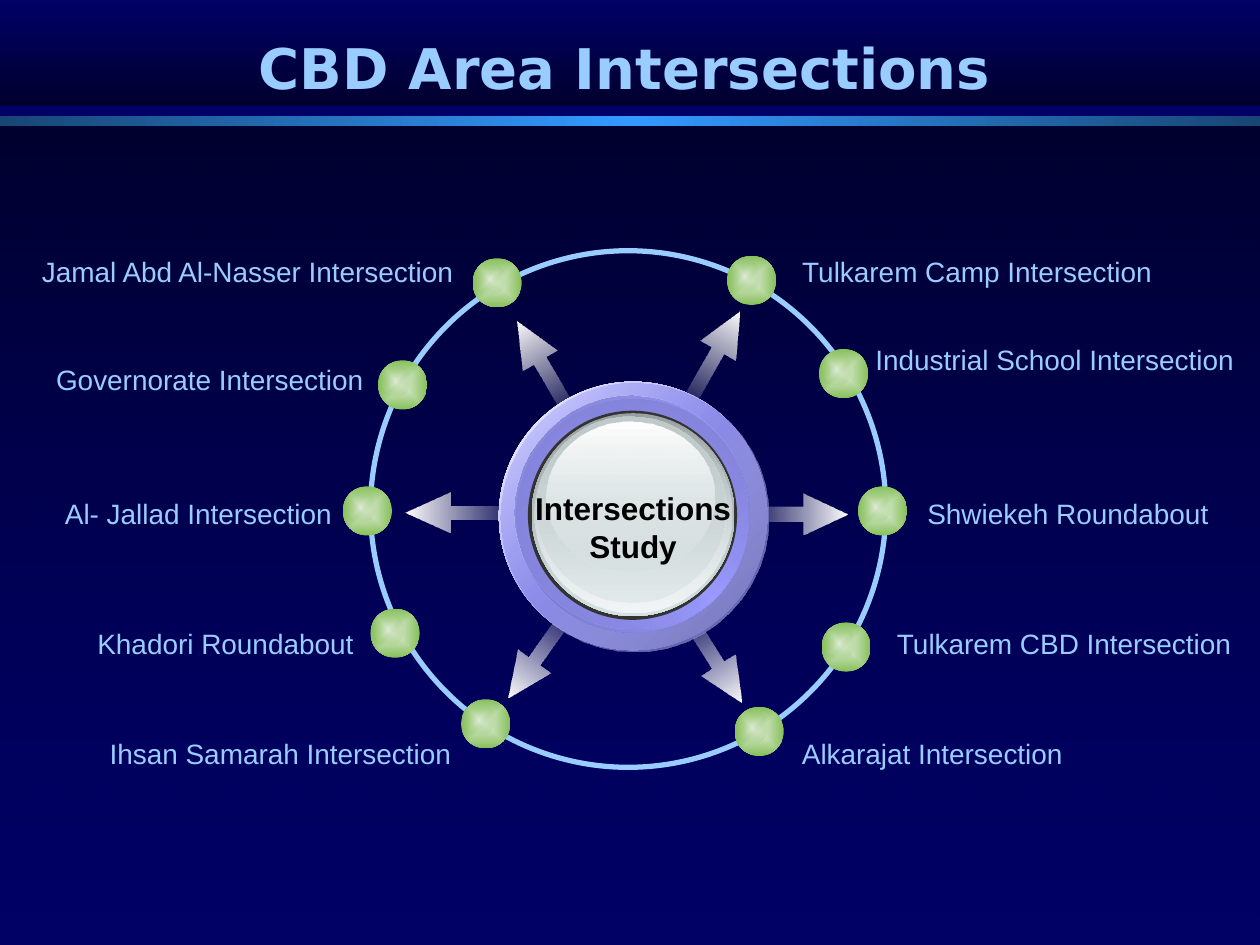
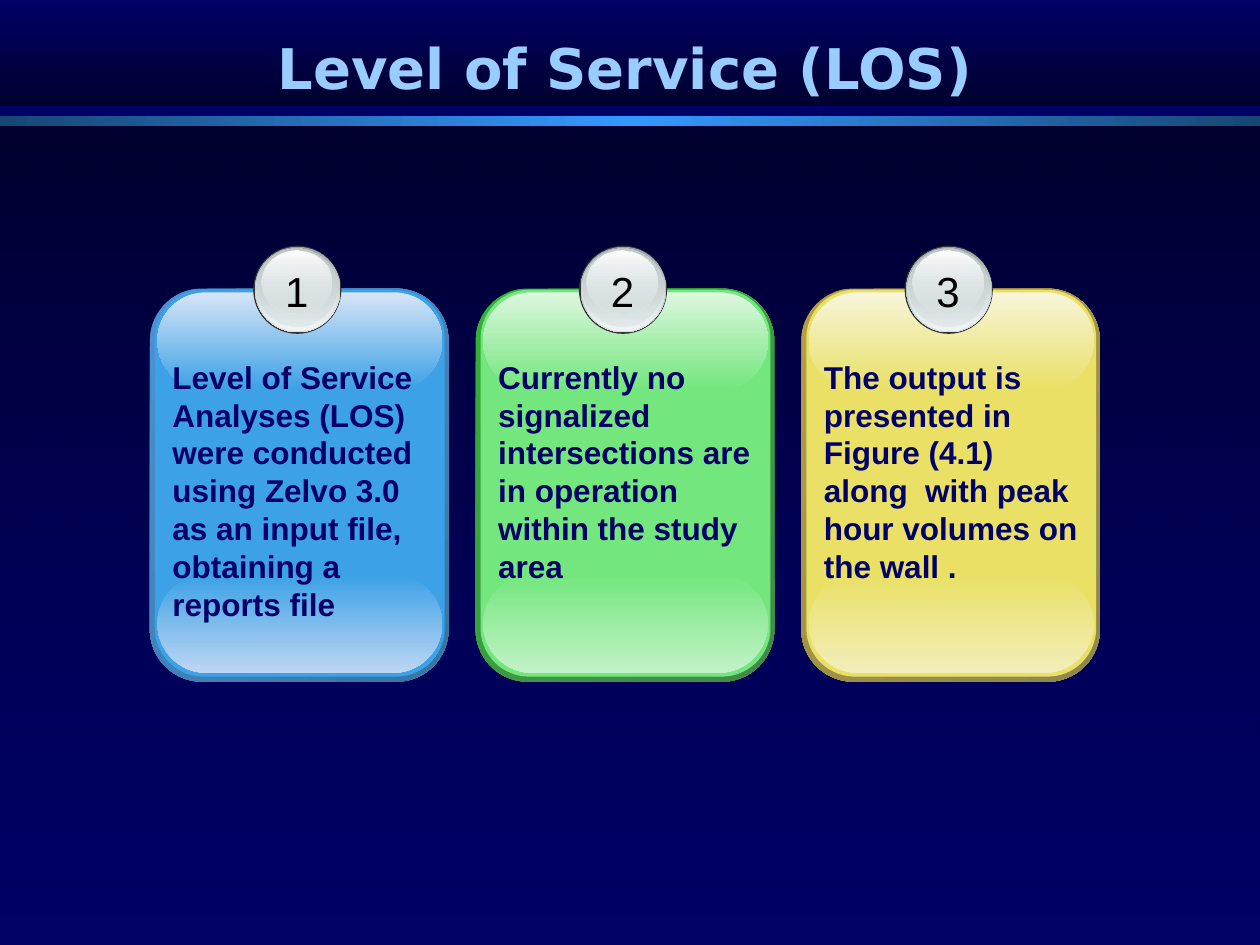
from lxml import etree
from pptx import Presentation
from pptx.dml.color import RGBColor
from pptx.enum.shapes import MSO_SHAPE
from pptx.enum.text import MSO_ANCHOR, PP_ALIGN
from pptx.oxml.ns import qn
from pptx.util import Inches, Pt

RECT, ROUND = MSO_SHAPE.RECTANGLE, MSO_SHAPE.ROUNDED_RECTANGLE
OVAL, ARROW = MSO_SHAPE.OVAL, MSO_SHAPE.RIGHT_ARROW
LEFT, CENTER = PP_ALIGN.LEFT, PP_ALIGN.CENTER
TOP, MIDDLE = MSO_ANCHOR.TOP, MSO_ANCHOR.MIDDLE

NAVY, MIDNIGHT = "000066", "00002F"
SKY, AZURE, DEEP_AZURE = "99CCFF", "3399FF", "174675"
LILAC, CHARCOAL, BLACK, WHITE = "9999FF", "333333", "000000", "FFFFFF"
LEAF, PALE_LEAF = "86C05A", "E0ECD9"
BODY_FONT, TITLE_FONT = "Arial", "DejaVu Sans"

ORB_LAYERS = [
    ((0.018, 0.012, 0.97, 0.97), [(0, "99A1A2"), (100, "D6E1E2")]),
    ((0.03, 0.018, 0.945, 0.945), [(0, "D6E1E2", 0), (100, "F2F5F5")]),
    ((0.042, 0.03, 0.9, 0.885), [(0, "C1CBCC"), (100, "D6E1E2", 48)]),
    ((0.09, 0.054, 0.8, 0.717), [(0, WHITE), (100, "D6E1E2", 38)]),
]

HUB_RINGS = [
    ((0, 0, 2.13), [(0, WHITE), (50, LILAC), (100, WHITE)], 45),
    ((0.01, 0.01, 2.13), [(0, LILAC, 32), (100, "6D6DB6")], 45),
    ((0.14, 0.14, 1.85), [(0, "7575C3"), (50, LILAC), (100, "7575C3")], 315),
    ((0.12, 0.11, 1.85), [(0, "7E7ED1"), (100, LILAC, 0)], 45),
]

ARROWS = [
    (5.22, 2.69, 0.87, 299.6), (5.22, 5.05, 0.87, 57.8),
    (3.89, 2.77, 0.87, 239.5), (3.85, 5.02, 0.87, 125.6),
    (5.86, 3.92, 0.87, 0), (3.22, 3.91, 0.94, 180),
]

INTERSECTIONS = [
    ("Jamal Abd Al-Nasser Intersection", (3.75, 2.05), (0.21, 1.97, 3.51)),
    ("Governorate Intersection", (3.0, 2.86), (0.33, 2.83, 2.67)),
    ("Al- Jallad Intersection", (2.72, 3.86), (0.4, 3.89, 2.35)),
    ("Khadori Roundabout", (2.94, 4.83), (0.66, 4.92, 2.26)),
    ("Ihsan Samarah Intersection", (3.66, 5.55), (0.75, 5.8, 2.95)),
    ("Tulkarem Camp Intersection", (5.77, 2.03), (6.25, 1.97, 3.01)),
    ("Industrial School Intersection", (6.5, 2.77), (6.83, 2.67, 3.08)),
    ("Shwiekeh Roundabout", (6.81, 3.86), (7.25, 3.89, 2.45)),
    ("Tulkarem CBD Intersection", (6.52, 4.94), (7.0, 4.92, 2.89)),
    ("Alkarajat Intersection", (5.83, 5.61), (6.25, 5.8, 2.3)),
]

CARDS = [
    ("Level of Service Analyses (LOS) were conducted using Zelvo 3.0 "
     "as an input file, obtaining a reports file",
     "3CA1E6", ("4E91D4", "3477A4"), "D7E5F7", "BDD6F3"),
    ("Currently no signalized intersections are in operation within "
     "the study area",
     "73E77E", ("34B034", "3F8B4A"), "DDF7DF", "C3F2C7"),
    ("The output is presented in Figure (4.1) along  with peak hour "
     "volumes on the wall .",
     "E9E065", ("B59F43", "8F8849"), "F8F5DB", "F3EEBB"),
]


def rgb(value):
    """Turn a hex string into a colour."""
    return RGBColor.from_string(value)


def fill_gradient(shape, stops, angle):
    """Fill a shape with (position, colour, opacity) stops; no angle means from the centre."""
    shape.fill.background()
    properties = shape.fill._xPr
    gradient = etree.Element(qn("a:gradFill"), rotWithShape="1")
    stop_list = etree.SubElement(gradient, qn("a:gsLst"))
    for position, color, *opacity in stops:
        stop = etree.SubElement(stop_list, qn("a:gs"), pos=str(position * 1000))
        tone = etree.SubElement(stop, qn("a:srgbClr"), val=color)
        if opacity:
            etree.SubElement(tone, qn("a:alpha"), val=str(opacity[0] * 1000))
    if angle is None:
        center = etree.SubElement(gradient, qn("a:path"), path="shape")
        etree.SubElement(center, qn("a:fillToRect"),
                         {side: "50000" for side in "ltrb"})
    else:
        etree.SubElement(gradient, qn("a:lin"), ang=str(angle * 60000), scaled="1")
    properties.replace(properties.find(qn("a:noFill")), gradient)


def add_form(page, kind, box, fill=None, angle=90, adjustments=()):
    """Add an unlined preset shape with a solid, gradient or empty fill."""
    shape = page.shapes.add_shape(kind, *map(Inches, box))
    shape.shadow.inherit = False
    shape.line.fill.background()
    for index, value in enumerate(adjustments):
        shape.adjustments[index] = value
    if fill is None:
        shape.fill.background()
    elif isinstance(fill, str):
        shape.fill.solid()
        shape.fill.fore_color.rgb = rgb(fill)
    else:
        fill_gradient(shape, fill, angle)
    return shape


def add_text(page, box, lines, size, color, bold=False, font=BODY_FONT,
             align=CENTER, anchor=TOP, wrap=False):
    """Add a text box with one paragraph per line."""
    frame = page.shapes.add_textbox(*map(Inches, box)).text_frame
    frame.word_wrap = wrap
    frame.vertical_anchor = anchor
    for index, line in enumerate(lines):
        para = frame.add_paragraph() if index else frame.paragraphs[0]
        para.alignment = align
        span = para.add_run()
        span.text = line
        span.font.name = font
        span.font.size = Pt(size)
        span.font.bold = bold
        span.font.color.rgb = rgb(color)


def add_page(deck, title):
    """Add a slide with the shared background, bands and title."""
    page = deck.slides.add_slide(deck.slide_layouts[6])
    page.background.fill.solid()
    page.background.fill.fore_color.rgb = rgb(NAVY)
    add_form(page, RECT, (0, 0, 10, 0.84), [(0, NAVY), (100, MIDNIGHT)])
    add_form(page, RECT, (0, 0.99, 10, 6.51), [(0, MIDNIGHT), (100, NAVY, 48)])
    add_form(page, RECT, (0, 0.92, 10, 0.08),
             [(0, DEEP_AZURE), (50, AZURE), (100, DEEP_AZURE)], 0)
    add_text(page, (0.25, 0.17, 9.42, 0.73), [title], 32, SKY, bold=True,
             font=TITLE_FONT, anchor=MIDDLE, wrap=True)
    return page


def add_orb(page, left, top, size):
    """Add a glossy silver ball."""
    add_form(page, OVAL, (left, top, size, size), CHARCOAL)
    for (x, y, width, height), stops in ORB_LAYERS:
        add_form(page, OVAL, (left + x * size, top + y * size,
                              width * size, height * size), stops)


def add_bead(page, left, top):
    """Add a green bead with its highlight."""
    add_form(page, OVAL, (left, top, 0.39, 0.39),
             [(0, PALE_LEAF), (100, LEAF)], None)
    add_form(page, OVAL, (left + 0.02, top + 0.04, 0.24, 0.25),
             [(0, PALE_LEAF), (100, LEAF, 0)], None)


def add_hub(page, left, top):
    """Add the ringed hub with its caption."""
    for (x, y, size), stops, angle in HUB_RINGS:
        add_form(page, OVAL, (left + x, top + y, size, size), stops, angle)
    add_orb(page, left + 0.23, top + 0.23, 1.66)
    add_text(page, (left + 0.18, top + 0.8, 1.77, 0.71),
             ["Intersections", "Study"], 18, BLACK, bold=True)


def add_card(page, left, top, number, card):
    """Add a numbered glossy card."""
    text, base, rim, top_shine, bottom_shine = card
    add_form(page, ROUND, (left, top, 2.37, 3.12),
             [(0, rim[0]), (100, rim[1])], 45, [0.175])
    add_form(page, ROUND, (left + 0.04, top + 0.01, 2.3, 3.07), base,
             adjustments=[0.167])
    add_form(page, ROUND, (left + 0.06, top + 2.27, 2.26, 0.78),
             [(0, base), (100, bottom_shine)], adjustments=[0.5])
    add_form(page, ROUND, (left + 0.06, top + 0.03, 2.26, 0.77),
             [(0, top_shine), (100, base)], adjustments=[0.5])
    add_orb(page, left + 0.82, top - 0.34, 0.7)
    add_text(page, (left + 0.97, top - 0.23, 0.39, 0.5), [str(number)], 24, BLACK)
    add_text(page, (left + 0.08, top + 0.5, 2.25, 2.22), [text], 18, NAVY,
             bold=True, align=LEFT, wrap=True)


def build_intersections(deck):
    """Build the wheel of intersections."""
    page = add_page(deck, "CBD Area Intersections")
    for left, top, length, turn in ARROWS:
        arrow = add_form(page, ARROW, (left, top, length, 0.32),
                         [(0, "F2F2F2", 0), (100, WHITE)], 0, [0.352, 1.11])
        arrow.rotation = turn
    wheel = add_form(page, OVAL, (2.94, 1.99, 4.09, 4.1))
    wheel.line.color.rgb = rgb(SKY)
    wheel.line.width = Pt(3)
    add_hub(page, 3.96, 3.03)
    for name, bead, label in INTERSECTIONS:
        add_bead(page, *bead)
        add_text(page, (*label, 0.37), [name], 16, SKY)


def build_service_levels(deck):
    """Build the row of three numbered cards."""
    page = add_page(deck, "Level of Service (LOS)")
    for index, card in enumerate(CARDS):
        add_card(page, 1.19 + index * 2.585, 2.29, index + 1, card)


def main():
    """Build and save the deck."""
    deck = Presentation()
    deck.slide_width, deck.slide_height = Inches(10), Inches(7.5)
    build_intersections(deck)
    build_service_levels(deck)
    deck.save("out.pptx")


if __name__ == "__main__":
    main()
